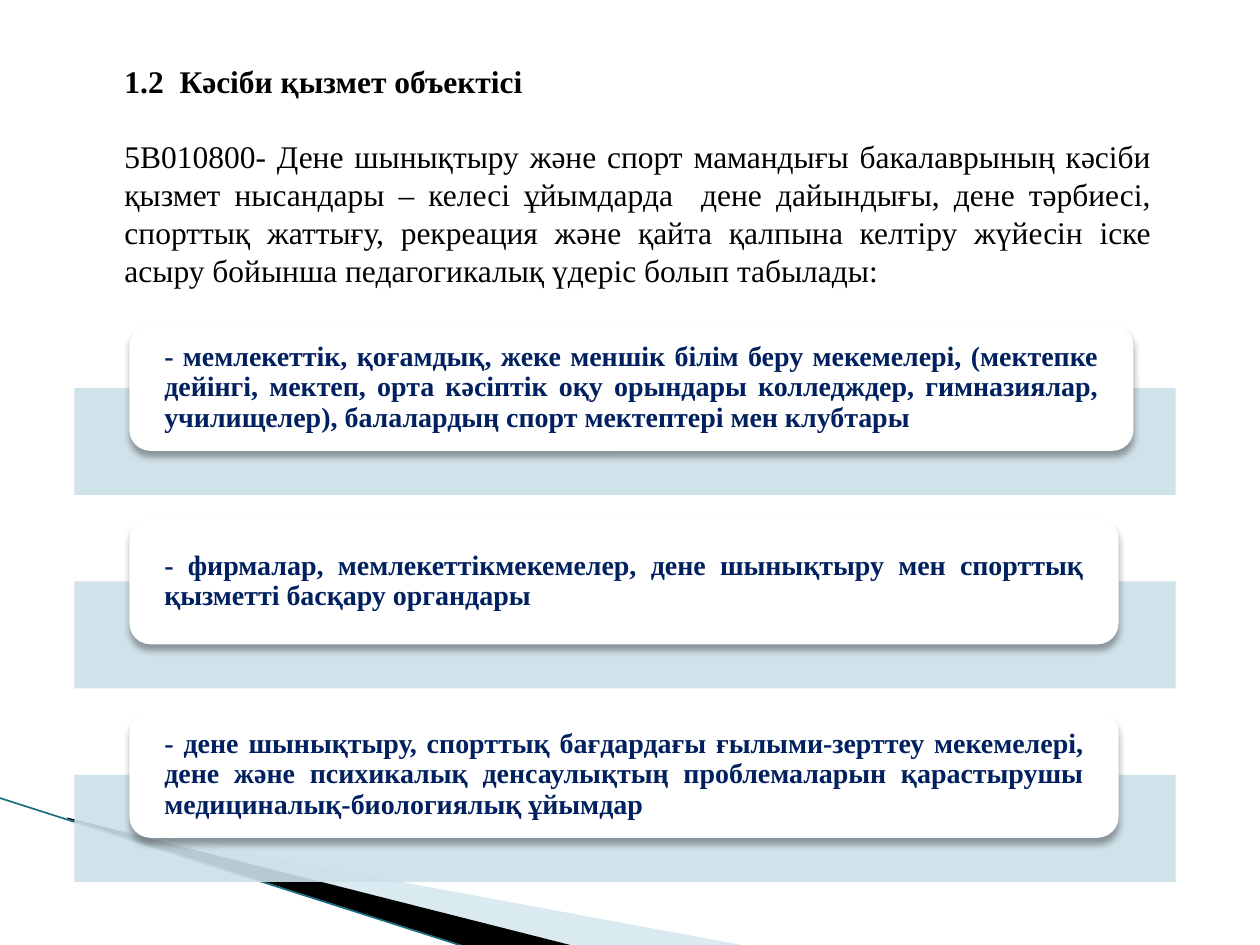
from lxml.etree import SubElement as Sub
from pptx import Presentation as Deck
from pptx.dml.color import RGBColor as RGB
from pptx.enum.shapes import MSO_CONNECTOR as Conn, MSO_SHAPE as Kind
from pptx.enum.text import MSO_ANCHOR as Anchor, PP_ALIGN as Align
from pptx.oxml.ns import qn
from pptx.util import Cm, Pt

BLACK = RGB(0x00, 0x00, 0x00)
WHITE = RGB(0xFF, 0xFF, 0xFF)
NAVY = RGB(0x00, 0x20, 0x60)
PANEL = RGB(0xCD, 0xE0, 0xE8)
SWOOSH = RGB(0xA0, 0xCB, 0xDC)
TEAL = RGB(0x1A, 0x6E, 0x84)

FACE = "Times New Roman"
HEAD = "1.2  Кәсіби қызмет объектісі"
INTRO = (
    "5В010800- Дене шынықтыру және спорт мамандығы бакалаврының кәсіби "
    "қызмет нысандары – келесі ұйымдарда  дене дайындығы, дене тәрбиесі, "
    "спорттық жаттығу, рекреация және қайта қалпына келтіру жүйесін іске "
    "асыру бойынша педагогикалық үдеріс болып табылады:"
)
ROWS = [
    (20.24, "- мемлекеттік, қоғамдық, жеке меншік білім беру мекемелері, "
            "(мектепке дейінгі, мектеп, орта кәсіптік оқу орындары колледждер, "
            "гимназиялар, училищелер), балалардың спорт мектептері мен клубтары"),
    (19.94, "- фирмалар, мемлекеттікмекемелер, дене шынықтыру мен спорттық "
            "қызметті басқару органдары"),
    (19.94, "- дене шынықтыру, спорттық бағдардағы ғылыми-зерттеу мекемелері, "
            "дене және психикалық денсаулықтың проблемаларын қарастырушы "
            "медициналық-биологиялық ұйымдар"),
]


def apply(item, **vals):
    for key, val in vals.items():
        setattr(item, key, val)


def paint(shape, color, alpha=100):
    shape.shadow.inherit = False
    shape.fill.solid()
    shape.fill.fore_color.rgb = color
    shape.line.fill.background()
    if alpha < 100:
        tint = shape.fill._xPr.find(qn("a:solidFill"))[0]
        Sub(tint, qn("a:alpha"), val=str(alpha * 1000))


def shade(shape):
    list_ = shape._element.spPr.find(qn("a:effectLst"))
    glow = Sub(list_, qn("a:outerShdw"), blurRad=str(Pt(4)), dist=str(Pt(3)),
               dir="5400000", algn="ctr", rotWithShape="0")
    tint = Sub(glow, qn("a:srgbClr"), val=str(BLACK))
    Sub(tint, qn("a:alpha"), val="35000")


def write(para, text, size, color, bold, **form):
    run = para.add_run()
    run.text = text
    apply(run.font, name=FACE, size=Pt(size), bold=bold)
    run.font.color.rgb = color
    apply(para, **form)


def add_swoosh(shapes, left, top):
    bands = [
        (SWOOSH, 40, [(1.4, 0.54), (15.11, 3.08), (11.58, 3.08), (1.4, 0.51)]),
        (BLACK, 100, [(1.35, 0.48), (11.61, 3.08), (9.45, 3.1), (1.37, 0.51)]),
    ]
    for color, alpha, spots in bands:
        first, *rest = [(Cm(left + x), Cm(top + y)) for x, y in spots]
        path = shapes.build_freeform(*first)
        path.add_line_segments(rest, close=True)
        paint(path.convert_to_shape(), color, alpha)
    edge = shapes.add_connector(Conn.STRAIGHT, Cm(left - 0.03), Cm(top + 0.08),
                                Cm(left + 9.42), Cm(top + 3.1))
    edge.line.color.rgb = TEAL
    edge.line.width = Pt(0.95)
    Sub(edge._element.spPr, qn("a:effectLst"))


def add_intro(shapes, left, top, width, height):
    box = shapes.add_textbox(Cm(left), Cm(top), Cm(width), Cm(height))
    frame = box.text_frame
    frame.word_wrap = True
    write(frame.paragraphs[0], HEAD, 18, BLACK, True, space_after=Pt(21.5))
    write(frame.add_paragraph(), INTRO, 18, BLACK, False,
          alignment=Align.JUSTIFY)


def add_row(shapes, left, top, width, span, text):
    panel = shapes.add_shape(Kind.RECTANGLE, Cm(left), Cm(top + 1.27),
                             Cm(width), Cm(2.16))
    paint(panel, PANEL, 90)
    card = shapes.add_shape(Kind.ROUNDED_RECTANGLE, Cm(left + 1.11), Cm(top),
                            Cm(span), Cm(2.54))
    paint(card, WHITE)
    shade(card)
    frame = card.text_frame
    apply(frame, word_wrap=True, vertical_anchor=Anchor.MIDDLE,
          margin_left=Cm(0.58), margin_right=Cm(0.58),
          margin_top=0, margin_bottom=0)
    write(frame.paragraphs[0], text, 16, NAVY, True,
          alignment=Align.JUSTIFY, line_spacing=0.9)


def main():
    deck = Deck()
    apply(deck, slide_width=Cm(25.4), slide_height=Cm(19.05))
    shapes = deck.slides.add_slide(deck.slide_layouts[6]).shapes
    add_swoosh(shapes, 0, 16)
    add_intro(shapes, 2.26, 1.12, 21.21, 4.88)
    for i, (span, text) in enumerate(ROWS):
        add_row(shapes, 1.5, 6.55 + 3.9 * i, 22.2, span, text)
    deck.save("out.pptx")


if __name__ == "__main__":
    main()
